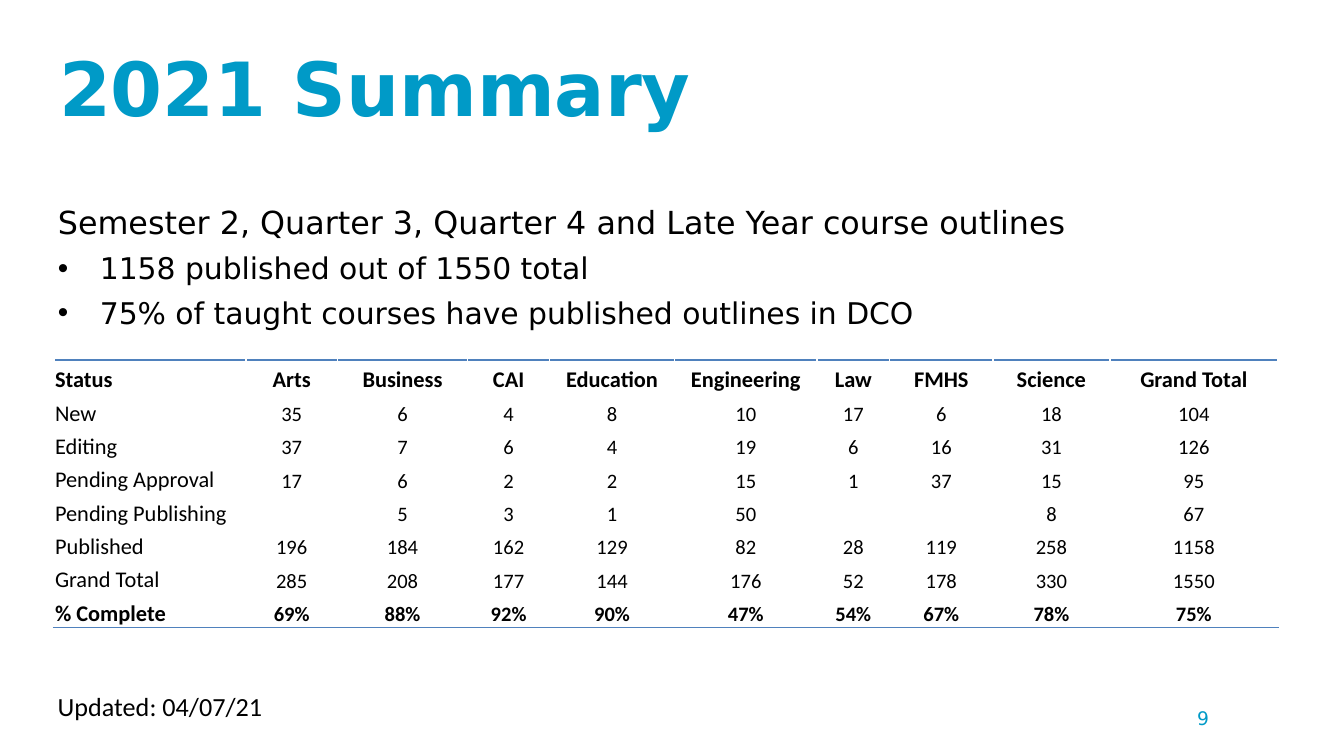
"""Build the 2021 course outline summary slide."""
from lxml.etree import SubElement
from pptx import Presentation
from pptx.dml.color import RGBColor
from pptx.enum.text import MSO_ANCHOR, MSO_AUTO_SIZE, PP_ALIGN
from pptx.oxml.ns import qn
from pptx.util import Pt

HUES = {"ink": "000000", "blue": "009AC7", "rule": "4F81BD", "paper": "FFFFFF"}
SANS, PLAIN = "DejaVu Sans", "Calibri"
WIDTHS = [103, 49, 69.8, 43.9, 67, 76.3, 38.9, 55.4, 62.6, 90]
ROWS = [
    ["Status", "Arts", "Business", "CAI", "Education", "Engineering", "Law", "FMHS", "Science", "Grand Total"],
    ["New", "35", "6", "4", "8", "10", "17", "6", "18", "104"],
    ["Editing", "37", "7", "6", "4", "19", "6", "16", "31", "126"],
    ["Pending Approval", "17", "6", "2", "2", "15", "1", "37", "15", "95"],
    ["Pending Publishing", "", "5", "3", "1", "50", "", "", "8", "67"],
    ["Published", "196", "184", "162", "129", "82", "28", "119", "258", "1158"],
    ["Grand Total", "285", "208", "177", "144", "176", "52", "178", "330", "1550"],
    ["% Complete", "69%", "88%", "92%", "90%", "47%", "54%", "67%", "78%", "75%"],
]


def write(para, text, size=12, face=PLAIN, hue="ink", bold=False, align=PP_ALIGN.LEFT):
    para.alignment = align
    if not text:
        SubElement(para._p, qn("a:endParaRPr"), sz=str(size * 100))
        return
    run = para.add_run()
    run.text = text
    font = run.font
    font.size, font.name, font.bold = Pt(size), face, bold
    font.color.rgb = RGBColor.from_string(HUES[hue])


def mark(para, indent=0):
    props = para._p.get_or_add_pPr()
    props.set("marL", str(Pt(indent)))
    props.set("indent", str(-Pt(indent)))
    if indent:
        SubElement(props, qn("a:buFont"), typeface="Arial")
        SubElement(props, qn("a:buChar"), char="•")
    else:
        SubElement(props, qn("a:buNone"))


def border(cell, side):
    props = cell._tc.get_or_add_tcPr()
    line = SubElement(props, qn(f"a:{side}"), w=str(Pt(1)))
    fill = SubElement(line, qn("a:solidFill"))
    SubElement(fill, qn("a:srgbClr"), val=HUES["rule"])


class Sheet:
    def __init__(self, deck):
        self.slide = deck.slides.add_slide(deck.slide_layouts[1])

    def place(self, shape, left, top, width, height):
        shape.left, shape.top = Pt(left), Pt(top)
        shape.width, shape.height = Pt(width), Pt(height)
        frame = shape.text_frame
        frame.word_wrap = True
        frame.auto_size = MSO_AUTO_SIZE.NONE
        frame.vertical_anchor = MSO_ANCHOR.TOP
        return frame

    def title(self, text, *area):
        frame = self.place(self.slide.shapes.title, *area)
        write(frame.paragraphs[0], text, size=40, face=SANS, hue="blue", bold=True)

    def body(self, lead, points, *area):
        frame = self.place(self.slide.placeholders[1], *area)
        for i, text in enumerate([lead, *points]):
            para = frame.add_paragraph() if i else frame.paragraphs[0]
            mark(para, indent=22.5 if i else 0)
            para.line_spacing = Pt(24)
            para.space_before = Pt(0)
            write(para, text, size=16 if i else 17, face=SANS)

    def label(self, text, *area, **style):
        box = self.slide.shapes.add_textbox(*map(Pt, area))
        write(self.place(box, *area).paragraphs[0], text, **style)

    def table(self, rows, widths, left, top, step):
        area = map(Pt, (left, top, sum(widths), step * len(rows)))
        grid = self.slide.shapes.add_table(len(rows), len(widths), *area).table
        grid.first_row = grid.horz_banding = False
        for col, width in zip(grid.columns, widths):
            col.width = Pt(width)
        last = len(rows) - 1
        for r, row in enumerate(rows):
            grid.rows[r].height = Pt(step)
            for c, text in enumerate(row):
                self.cell(grid.cell(r, c), text, r, c, last)

    def cell(self, cell, text, r, c, last):
        cell.margin_left = cell.margin_right = cell.margin_top = Pt(0.7)
        cell.margin_bottom = Pt(0)
        cell.vertical_anchor = MSO_ANCHOR.BOTTOM
        if r in (0, last):
            border(cell, "lnB" if r else "lnT")
        cell.fill.solid()
        cell.fill.fore_color.rgb = RGBColor.from_string(HUES["paper"])
        write(cell.text_frame.paragraphs[0], text, size=11 if r and c else 12,
              bold=r in (0, last), align=PP_ALIGN.CENTER if c else PP_ALIGN.LEFT)


def main():
    deck = Presentation()
    deck.slide_width, deck.slide_height = Pt(720), Pt(405)
    sheet = Sheet(deck)
    sheet.title("2021 Summary", 24.5, 18.7, 483, 75)
    sheet.body("Semester 2, Quarter 3, Quarter 4 and Late Year course outlines",
               ["1158 published out of 1550 total",
                "75% of taught courses have published outlines in DCO"],
               23.8, 101.5, 661, 260.6)
    sheet.table(ROWS, WIDTHS, left=28.8, top=193, step=17.9)
    sheet.label("Updated: 04/07/21", 23.8, 366.5, 258.5, 24.5, size=14)
    sheet.label("9", 634.3, 375, 50.4, 28, size=10, face=SANS, hue="blue")
    deck.save("out.pptx")


if __name__ == "__main__":
    main()
